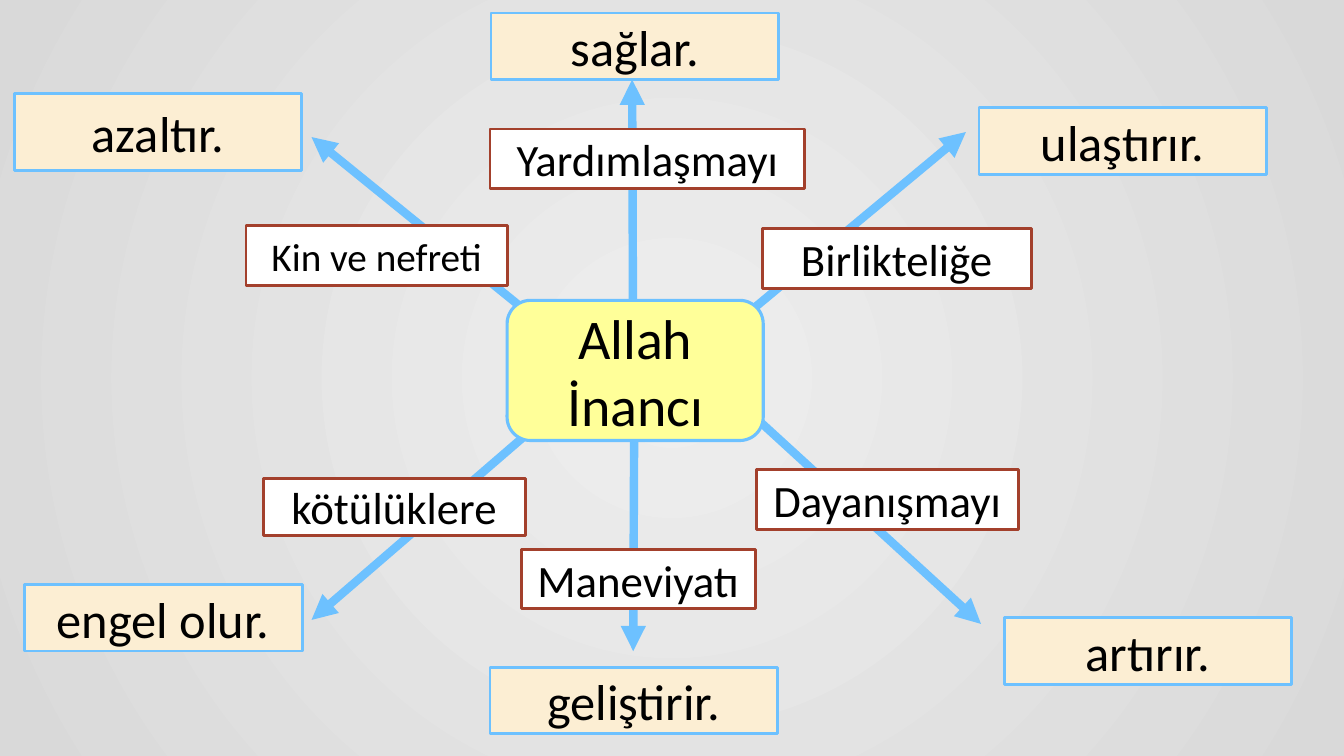
from lxml.etree import SubElement
from pptx import Presentation
from pptx.dml.color import RGBColor as Rgb
from pptx.enum.shapes import MSO_CONNECTOR as Link, MSO_SHAPE as Kind
from pptx.enum.text import MSO_ANCHOR as Anchor, PP_ALIGN as Align
from pptx.oxml.ns import qn
from pptx.util import Inches, Pt

COLORS = {
    "black": "000000", "white": "FFFFFF", "blue": "6DC1FF", "cream": "FCEED3",
    "red": "A3402C", "yellow": "FFFF99", "light": "EEEEEE", "gray": "D9D9D9",
}

RESULTS = [
    ("azaltır.", 0.14, 0.93, 2.85, 0.76),
    ("sağlar.", 4.87, 0.13, 2.85, 0.66),
    ("ulaştırır.", 9.71, 1.07, 2.85, 0.66),
    ("artırır.", 9.96, 6.13, 2.85, 0.66),
    ("geliştirir.", 4.86, 6.62, 2.85, 0.66),
    ("engel olur.", 0.24, 5.8, 2.76, 0.66),
]

BRANCHES = [
    ((5.37, 3.21, 3.09, 1.36), "Kin ve nefreti", (2.44, 2.24, 2.59, 0.59), 28),
    ((6.28, 3.58, 6.27, 0.79), "Yardımlaşmayı", (4.86, 1.28, 3.12, 0.59), 32),
    ((7.21, 3.28, 9.58, 1.31), "Birlikteliğe", (7.56, 2.27, 2.67, 0.59), 32),
    ((7.37, 4.03, 9.73, 6.19), "Dayanışmayı", (7.5, 4.66, 2.6, 0.59), 32),
    ((6.29, 4.25, 6.28, 6.46), "Maneviyatı", (5.17, 5.45, 2.32, 0.59), 32),
    ((5.43, 4.13, 3.09, 6.15), "kötülüklere", (2.61, 4.75, 2.6, 0.56), 32),
]


def color(name):
    return Rgb.from_string(COLORS[name])


def paint_back(slide):
    fill = slide.background.fill
    fill.gradient()
    for stop, name in zip(fill.gradient_stops, ("light", "gray")):
        stop.color.rgb = color(name)
    grad = slide.element.find(".//" + qn("a:gradFill"))
    grad.remove(grad.find(qn("a:lin")))
    route = SubElement(grad, qn("a:path"), path="circle")
    SubElement(route, qn("a:fillToRect"), l="50000", t="50000", r="50000", b="50000")


def add_box(slide, text, area, size, fill, edge, kind=Kind.RECTANGLE, width=2):
    box = slide.shapes.add_shape(kind, *map(Inches, area))
    box.shadow.inherit = False
    box.fill.solid()
    box.fill.fore_color.rgb = color(fill)
    box.line.color.rgb = color(edge)
    box.line.width = Pt(width)
    frame = box.text_frame
    frame.word_wrap = True
    frame.vertical_anchor = Anchor.MIDDLE
    para = frame.paragraphs[0]
    para.text = text
    para.alignment = Align.CENTER
    para.font.name = "Calibri"
    para.font.size = Pt(size)
    para.font.color.rgb = color("black")


def add_arrow(slide, ends):
    arrow = slide.shapes.add_connector(Link.STRAIGHT, *map(Inches, ends))
    arrow.line.color.rgb = color("blue")
    arrow.line.width = Pt(6)
    SubElement(arrow.line._get_or_add_ln(), qn("a:tailEnd"), type="triangle")
    SubElement(arrow._element.spPr, qn("a:effectLst"))


def main():
    deck = Presentation()
    deck.slide_width = Inches(13.33)
    deck.slide_height = Inches(7.5)
    slide = deck.slides.add_slide(deck.slide_layouts[6])
    paint_back(slide)
    for text, *area in RESULTS:
        add_box(slide, text, area, 36, "cream", "blue")
    for ends, text, area, size in BRANCHES:
        add_arrow(slide, ends)
        add_box(slide, text, area, size, "white", "red")
    add_box(slide, "Allah İnancı", (5.03, 2.98, 2.54, 1.39), 40,
            "yellow", "blue", Kind.ROUNDED_RECTANGLE, 2.25)
    deck.save("out.pptx")


if __name__ == "__main__":
    main()
